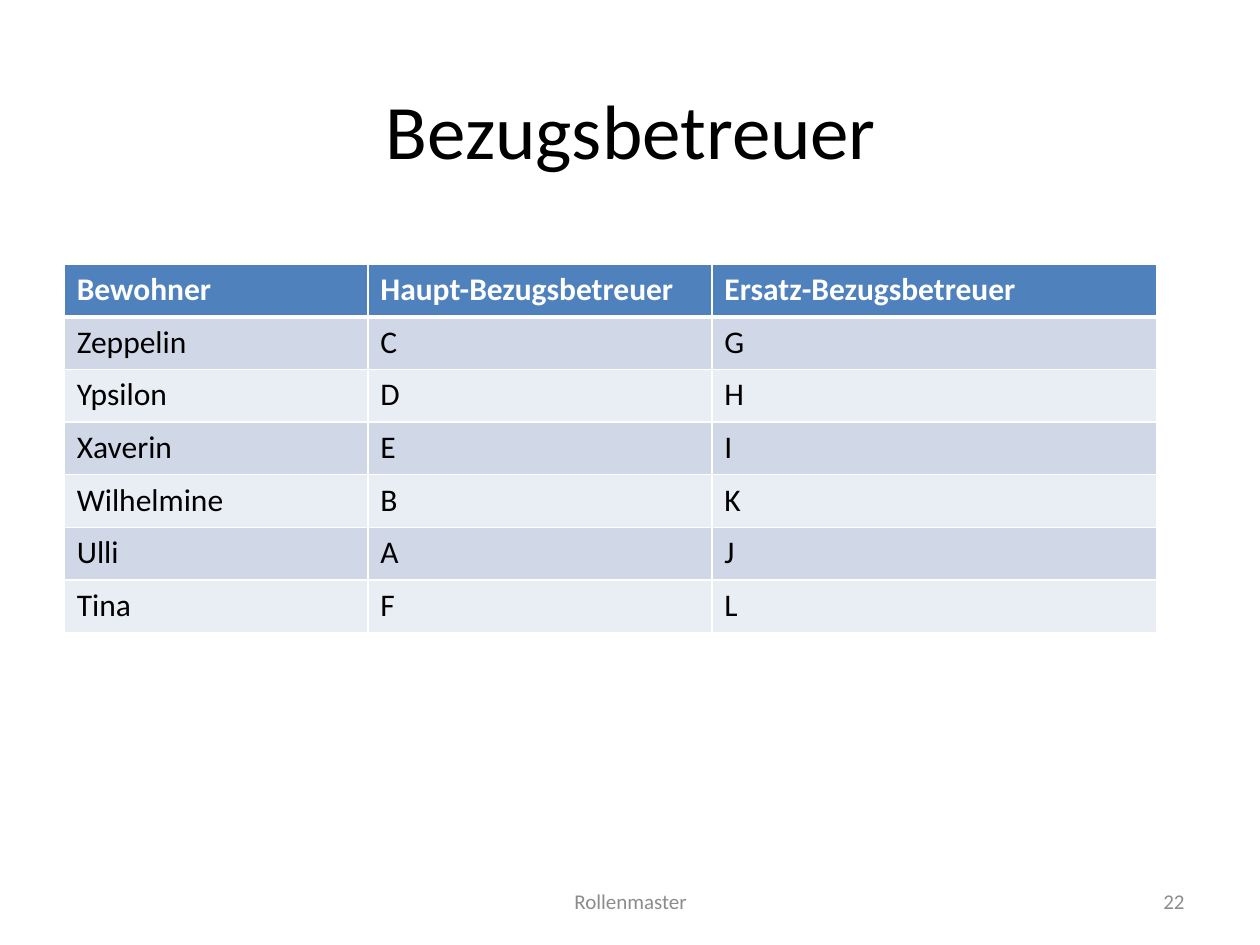
import pptx
import pptx.util
import pptx.dml.color
import pptx.enum.text
import pptx.oxml
import lxml.etree

COLORS = {
    "text": "000000",
    "muted": "8C8C8C",
    "white": "FFFFFF",
    "header": "4F81BD",
    "band_dark": "D0D8E8",
    "band_light": "E9EDF4",
}
ALIGN = pptx.enum.text.PP_ALIGN
MIDDLE = pptx.enum.text.MSO_ANCHOR.MIDDLE
HEADER = ("Bewohner", "Haupt-Bezugsbetreuer", "Ersatz-Bezugsbetreuer")
RESIDENTS = [
    ("Zeppelin", "C", "G"),
    ("Ypsilon", "D", "H"),
    ("Xaverin", "E", "I"),
    ("Wilhelmine", "B", "K"),
    ("Ulli", "A", "J"),
    ("Tina", "F", "L"),
]


def rgb(name):
    """Return the palette colour with this name."""
    return pptx.dml.color.RGBColor.from_string(COLORS[name])


def write(tf, text, size=18, color="text", bold=False, align=ALIGN.LEFT, font="Calibri"):
    """Put one formatted line of text into a text frame."""
    p = tf.paragraphs[0]
    p.alignment = align
    r = p.add_run()
    r.text = text
    r.font.name = font
    r.font.size = pptx.util.Pt(size)
    r.font.bold = bold
    r.font.color.rgb = rgb(color)


class Deck:
    """Hold the presentation, its current slide and a 100 by 75 grid."""

    def __init__(self, width=10, height=7.5, columns=100, rows=75):
        """Start a presentation with one blank slide."""
        self.prs = pptx.Presentation()
        self.prs.slide_width = pptx.util.Inches(width)
        self.prs.slide_height = pptx.util.Inches(height)
        self.col = self.prs.slide_width / columns
        self.row = self.prs.slide_height / rows
        self.s = self.prs.slides.add_slide(self.prs.slide_layouts[6])
        self.s.background.fill.solid()
        self.s.background.fill.fore_color.rgb = rgb("white")

    def box(self, x, y, w, h):
        """Turn grid columns and rows into lengths."""
        return [round(v * u) for v, u in zip((x, y, w, h), (self.col, self.row) * 2)]

    def text(self, text, at, **style):
        """Add a vertically centred text box."""
        tf = self.s.shapes.add_textbox(*self.box(*at)).text_frame
        tf.word_wrap = True
        tf.vertical_anchor = MIDDLE
        write(tf, text, **style)

    def border(self, cell, **widths):
        """Draw white cell borders, given as points per side."""
        tcPr = cell._tc.get_or_add_tcPr()
        for side, points in widths.items():
            ln = lxml.etree.SubElement(tcPr, pptx.oxml.ns.qn(f"a:ln{side}"), w=str(pptx.util.Pt(points)))
            fill = lxml.etree.SubElement(ln, pptx.oxml.ns.qn("a:solidFill"))
            lxml.etree.SubElement(fill, pptx.oxml.ns.qn("a:srgbClr"), val=COLORS["white"])

    def table(self, header, body, x, y, widths, row_height):
        """Add a table with a header row and banded body rows."""
        data = [header, *body]
        at = self.box(x, y, sum(widths), row_height * len(data))
        table = self.s.shapes.add_table(len(data), len(header), *at).table
        for column, width in zip(table.columns, widths):
            column.width = round(width * self.col)
        for i, values in enumerate(data):
            table.rows[i].height = round(row_height * self.row)
            band = "header" if i == 0 else ("band_light", "band_dark")[i % 2]
            for j, value in enumerate(values):
                cell = table.cell(i, j)
                self.border(cell, L=1, R=1, T=3 if i == 1 else 1, B=3 if i == 0 else 1)
                cell.fill.solid()
                cell.fill.fore_color.rgb = rgb(band)
                write(cell.text_frame, value, bold=i == 0, color="white" if i == 0 else "text")


def main():
    """Build and save the slide."""
    deck = Deck()
    deck.text("Bezugsbetreuer", (5.1, 6, 90, 8.5), size=44, align=ALIGN.CENTER)
    deck.table(HEADER, RESIDENTS, 5.1, 21, (24.1, 27.3, 35.3), 4.17)
    footer = {"size": 12, "color": "muted"}
    deck.text("22", (71.7, 69.5, 23.3, 4), align=ALIGN.RIGHT, **footer)
    deck.text("Rollenmaster", (34.2, 69.5, 31.7, 4), align=ALIGN.CENTER, **footer)
    deck.prs.save("out.pptx")


if __name__ == "__main__":
    main()
